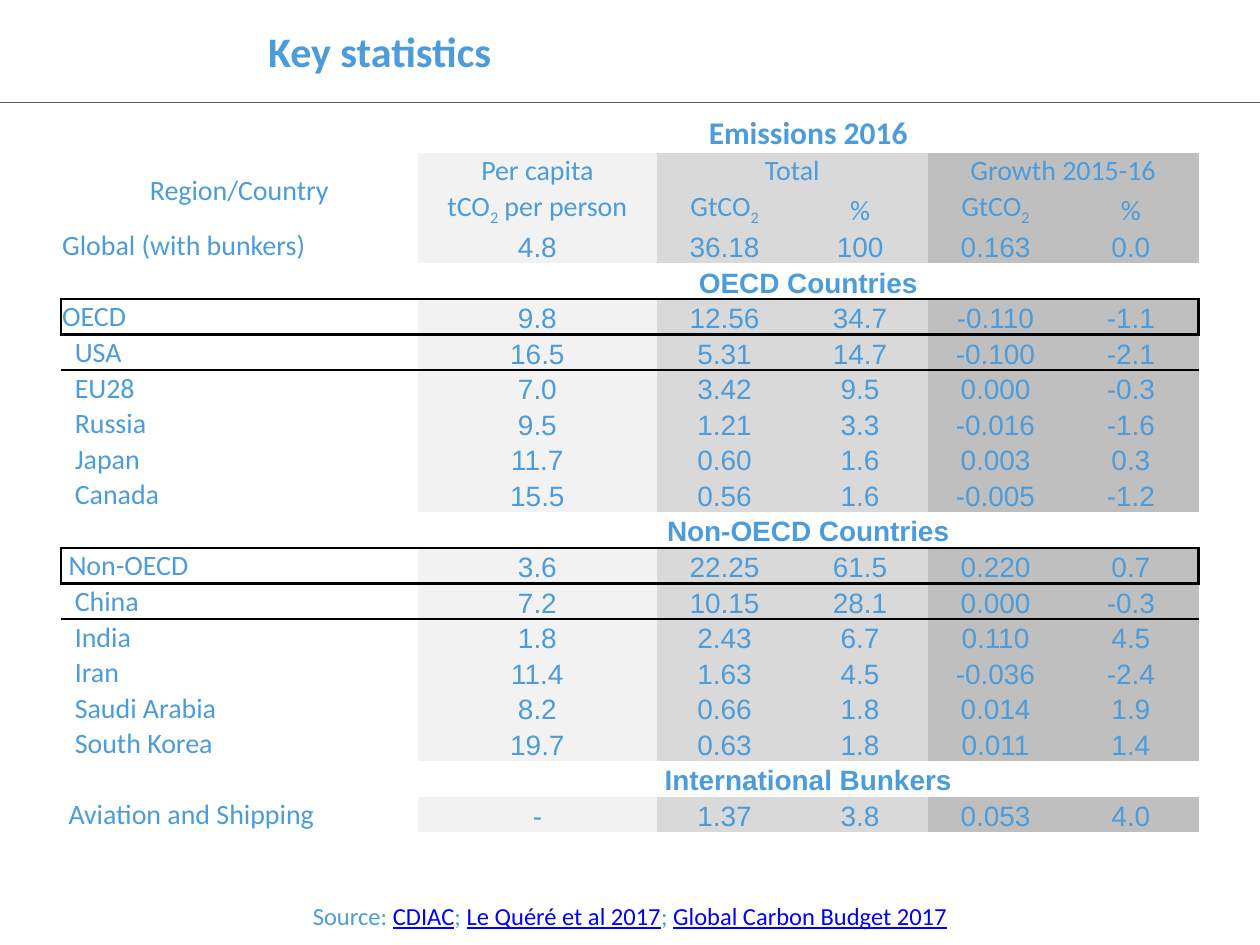
from lxml.etree import SubElement
from pptx import Presentation
from pptx.dml.color import RGBColor
from pptx.enum.shapes import MSO_CONNECTOR
from pptx.enum.text import MSO_ANCHOR as Anchor, PP_ALIGN as Align
from pptx.oxml import parse_xml
from pptx.oxml.ns import nsdecls, qn
from pptx.util import Pt

COLORS = {
    "text": "4C9BDB", "link": "0000FF", "rule": "595959", "frame": "000000",
    "white": "FFFFFF", "capita": "F2F2F2", "total": "D9D9D9", "growth": "BFBFBF",
}
COLUMN_FILLS = ["white", "capita", "total", "total", "growth", "growth"]
COLUMN_WIDTHS = [204, 136.6, 77.4, 77.4, 77.4, 77.4]
ROW_HEIGHT = 18
NO_STYLE = "{2D5ABB26-0587-4C30-8999-92F81FD0307C}"

HEADER_ROWS = [
    ["", "Emissions 2016"],
    ["Region/Country", "Per capita", "Total", "", "Growth 2015-16", ""],
    ["", "tCO_2_ per person", "GtCO_2_", "%", "GtCO_2_", "%"],
]
DATA_ROWS = [
    (0, ["Global (with bunkers)", "4.8", "36.18", "100", "0.163", "0.0"]),
    (0, ["", "OECD Countries"]),
    (0, ["OECD", "9.8", "12.56", "34.7", "-0.110", "-1.1"]),
    (2, ["USA", "16.5", "5.31", "14.7", "-0.100", "-2.1"]),
    (2, ["EU28", "7.0", "3.42", "9.5", "0.000", "-0.3"]),
    (2, ["Russia", "9.5", "1.21", "3.3", "-0.016", "-1.6"]),
    (2, ["Japan", "11.7", "0.60", "1.6", "0.003", "0.3"]),
    (2, ["Canada", "15.5", "0.56", "1.6", "-0.005", "-1.2"]),
    (0, ["", "Non-OECD Countries"]),
    (1, ["Non-OECD", "3.6", "22.25", "61.5", "0.220", "0.7"]),
    (2, ["China", "7.2", "10.15", "28.1", "0.000", "-0.3"]),
    (2, ["India", "1.8", "2.43", "6.7", "0.110", "4.5"]),
    (2, ["Iran", "11.4", "1.63", "4.5", "-0.036", "-2.4"]),
    (2, ["Saudi Arabia", "8.2", "0.66", "1.8", "0.014", "1.9"]),
    (2, ["South Korea", "19.7", "0.63", "1.8", "0.011", "1.4"]),
    (0, ["", "International Bunkers"]),
    (1, ["Aviation and Shipping", "-", "1.37", "3.8", "0.053", "4.0"]),
]
FRAMED_ROWS = {5, 12}


def rgb(name):
    return RGBColor.from_string(COLORS[name])


def set_font(font, size, name="Calibri", bold=False):
    font.size = Pt(size)
    font.name = name
    font.bold = bold
    font.color.rgb = rgb("text")


def add_title(slide, text):
    title = slide.shapes.title
    title.left, title.top, title.width, title.height = Pt(146), Pt(9.5), Pt(574), Pt(39.5)
    title.text_frame.text = text
    title.text_frame.vertical_anchor = Anchor.MIDDLE
    paragraph = title.text_frame.paragraphs[0]
    paragraph.alignment = Align.LEFT
    set_font(paragraph.font, 24, bold=True)


def add_rule(slide):
    rule = slide.shapes.add_connector(MSO_CONNECTOR.STRAIGHT, Pt(0), Pt(58.7), Pt(720), Pt(58.7))
    rule.line.color.rgb = rgb("rule")
    rule.line.width = Pt(0.75)
    SubElement(rule._element.spPr, qn("a:effectLst"))


def write_cell(cell, text, fill, alignment, anchor, level=0, size=16, name="Calibri", bold=False):
    cell.fill.solid()
    cell.fill.fore_color.rgb = rgb(fill)
    cell.margin_left = Pt(0.75 + 3.6 * level)
    cell.margin_right = cell.margin_top = Pt(0.75)
    cell.margin_bottom = Pt(0)
    cell.vertical_anchor = anchor
    paragraph = cell.text_frame.paragraphs[0]
    paragraph.alignment = alignment
    set_font(paragraph.font, size, name, bold)
    if not text:
        SubElement(paragraph._p, qn("a:endParaRPr"), sz=str(size * 100))
        return
    for index, part in enumerate(text.split("_")):
        if part:
            run = paragraph.add_run()
            run.text = part
            if index % 2:
                run._r.get_or_add_rPr().set("baseline", "-25000")


def add_borders(cell, edges):
    properties = cell._tc.get_or_add_tcPr()
    for index, edge in enumerate(edges):
        properties.insert(index, parse_xml(
            f'<a:ln{edge} {nsdecls("a")} w="{Pt(1.5)}"><a:solidFill>'
            f'<a:srgbClr val="{COLORS["frame"]}"/></a:solidFill></a:ln{edge}>'))


def frame_edges(row, column):
    framed = row in FRAMED_ROWS
    edges = "L" if framed and column == 0 else ""
    edges += "R" if framed and column == len(COLUMN_WIDTHS) - 1 else ""
    edges += "T" if framed or row - 1 in FRAMED_ROWS else ""
    edges += "B" if framed or row + 1 in FRAMED_ROWS else ""
    return edges


def add_statistics_table(slide):
    rows = [(0, texts) for texts in HEADER_ROWS] + DATA_ROWS
    frame = slide.shapes.add_table(len(rows), len(COLUMN_WIDTHS), Pt(34.8), Pt(64.6),
                                   Pt(sum(COLUMN_WIDTHS)), Pt(ROW_HEIGHT * len(rows)))
    table = frame.table
    table.first_row = table.horz_banding = False
    table._tbl.tblPr.find(qn("a:tableStyleId")).text = NO_STYLE
    for column, width in zip(table.columns, COLUMN_WIDTHS):
        column.width = Pt(width)
    for row, (level, texts) in enumerate(rows):
        table.rows[row].height = Pt(ROW_HEIGHT)
        header = row < len(HEADER_ROWS)
        section = len(texts) == 2
        for column, column_fill in enumerate(COLUMN_FILLS):
            cell = table.cell(row, column)
            label = column == 0
            middle = label or row < 2 or (header and column == 1)
            write_cell(
                cell,
                texts[column] if column < len(texts) else "",
                "white" if section else column_fill,
                Align.LEFT if label and not header else Align.CENTER,
                Anchor.MIDDLE if middle else Anchor.BOTTOM,
                level=level if label else 0,
                size=18 if row == 0 else 16,
                name="Calibri" if header or label else "Arial",
                bold=section,
            )
            add_borders(cell, frame_edges(row, column))
        if section:
            table.cell(row, 1).merge(table.cell(row, len(COLUMN_WIDTHS) - 1))
    table.cell(1, 0).merge(table.cell(2, 0))
    for column in (2, 4):
        table.cell(1, column).merge(table.cell(1, column + 1))


def add_source(slide, references):
    box = slide.shapes.add_textbox(Pt(0), Pt(491.8), Pt(720), Pt(43.2))
    box.text_frame.word_wrap = True
    box.text_frame.vertical_anchor = Anchor.BOTTOM
    paragraph = box.text_frame.paragraphs[0]
    paragraph.alignment = Align.CENTER
    set_font(paragraph.font, 14)
    for index, reference in enumerate(references):
        paragraph.add_run().text = "; " if index else "Source: "
        run = paragraph.add_run()
        run.text = reference
        run.font.underline = True
        run.font.color.rgb = rgb("link")


def main():
    presentation = Presentation()
    presentation.slide_width, presentation.slide_height = Pt(720), Pt(540)
    slide = presentation.slides.add_slide(presentation.slide_layouts[5])
    add_rule(slide)
    add_statistics_table(slide)
    add_title(slide, "Key statistics")
    add_source(slide, ["CDIAC", "Le Quéré et al 2017", "Global Carbon Budget 2017"])
    presentation.save("out.pptx")


if __name__ == "__main__":
    main()
